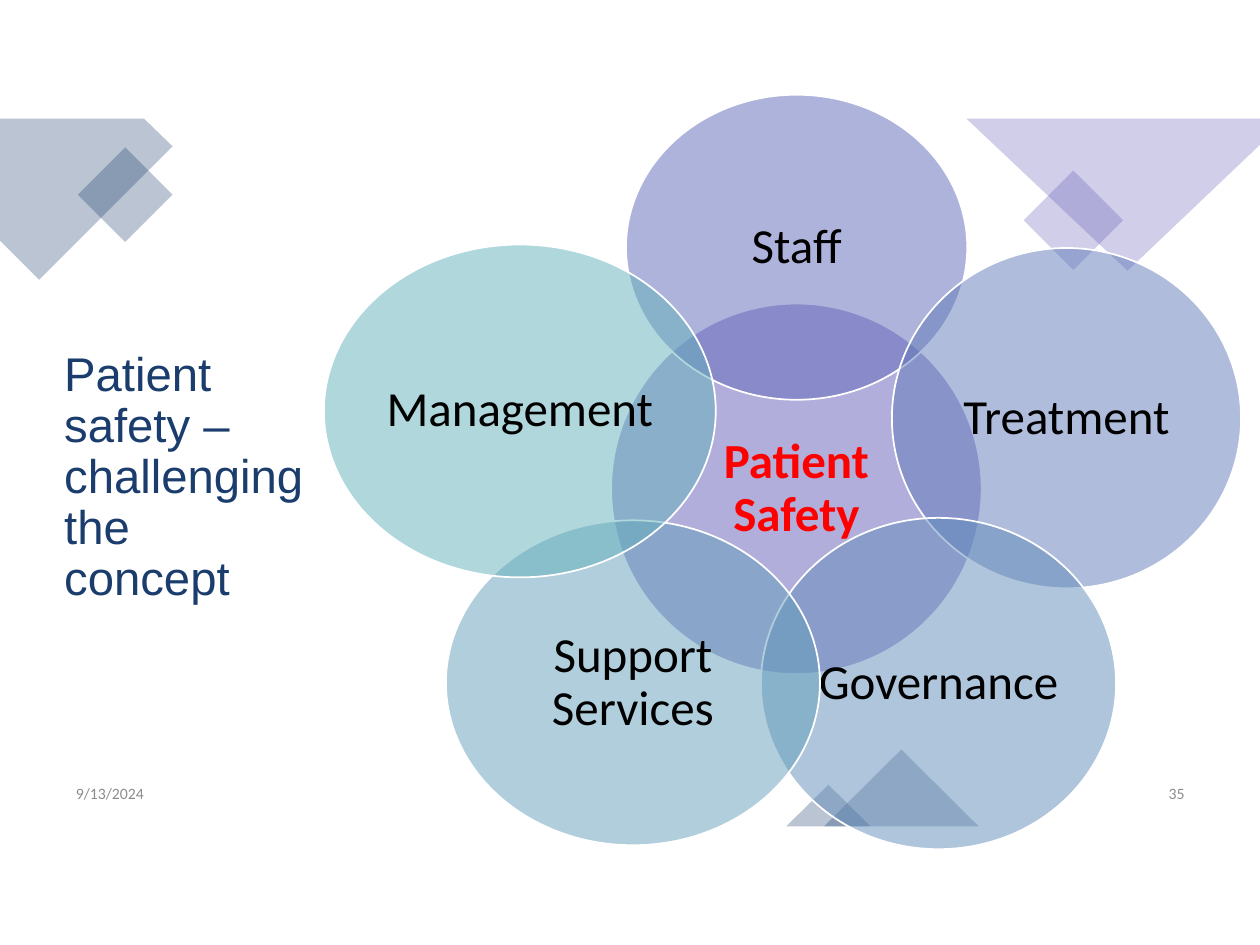
import dataclasses

import pptx
import pptx.dml.color
import pptx.enum.shapes
import pptx.enum.text
import pptx.oxml
import pptx.oxml.ns
import pptx.util

Cm = pptx.util.Cm
Pt = pptx.util.Pt
Shape = pptx.enum.shapes.MSO_SHAPE
Align = pptx.enum.text.PP_ALIGN
Anchor = pptx.enum.text.MSO_ANCHOR


@dataclasses.dataclass(frozen=True)
class Theme:
    navy: str = "1B3D6D"
    purple: str = "665EB8"
    grey: str = "8C8C8C"
    red: str = "FF0000"
    black: str = "000000"
    white: str = "FFFFFF"
    circles: tuple = ("665EB8", "5F68B9", "607AB9", "618CBA", "629EBA", "63B0BB")
    heading_font: str = "Arial"
    body_font: str = "Calibri"
    title_size: float = 27
    circle_size: float = 28
    footer_size: float = 9
    decor_opacity: int = 30
    circle_opacity: int = 50


THEME = Theme()


def rgb(color):
    return pptx.dml.color.RGBColor.from_string(color)


def fill_translucent(shape, color, opacity):
    shape.shadow.inherit = False
    shape.fill.solid()
    shape.fill.fore_color.rgb = rgb(color)
    tint = shape._element.spPr.find(pptx.oxml.ns.qn("a:solidFill"))[0]
    alpha = pptx.oxml.parse_xml(
        f'<a:alpha {pptx.oxml.ns.nsdecls("a")} val="{opacity * 1000}"/>')
    tint.append(alpha)


def write(frame, text, font, size, color, align, bold=False, spacing=None):
    frame.word_wrap = True
    frame.auto_size = pptx.enum.text.MSO_AUTO_SIZE.NONE
    frame.vertical_anchor = Anchor.MIDDLE
    paragraph = frame.paragraphs[0]
    paragraph.alignment = align
    paragraph.line_spacing = spacing
    run = paragraph.add_run()
    run.text = text
    run.font.name = font
    run.font.size = Pt(size)
    run.font.bold = bold
    run.font.color.rgb = rgb(color)


def set_insets(frame, across, down):
    frame.margin_left = frame.margin_right = Cm(across)
    frame.margin_top = frame.margin_bottom = Cm(down)


def add_decor(slide, kind, left, top, width, height, color, rotation=0):
    decor = slide.shapes.add_shape(kind, Cm(left), Cm(top), Cm(width), Cm(height))
    decor.rotation = rotation
    decor.line.fill.background()
    fill_translucent(decor, color, THEME.decor_opacity)


def add_corner(slide, corners, color):
    points = [(Cm(x), Cm(y)) for x, y in corners]
    builder = slide.shapes.build_freeform(*points[0])
    builder.add_line_segments(points[1:], close=True)
    corner = builder.convert_to_shape()
    corner.line.fill.background()
    fill_translucent(corner, color, THEME.decor_opacity)


def add_footer(slide, text, left, align):
    footer = slide.shapes.add_textbox(Cm(left), Cm(15.62), Cm(5.72), Cm(0.76))
    set_insets(footer.text_frame, 0.18, 0.1)
    write(footer.text_frame, text, THEME.body_font, THEME.footer_size,
          THEME.grey, align)


def add_title(slide, text):
    title = slide.shapes.title
    title.left, title.top, title.width, title.height = (
        Cm(1.04), Cm(5.99), Cm(5.38), Cm(7.29))
    write(title.text_frame, text, THEME.heading_font, THEME.title_size,
          THEME.navy, Align.LEFT, spacing=0.9)


def add_circle(slide, text, left, top, width, height, color, central):
    circle = slide.shapes.add_shape(
        Shape.OVAL, Cm(left), Cm(top), Cm(width), Cm(height))
    fill_translucent(circle, color, THEME.circle_opacity)
    circle.line.color.rgb = rgb(THEME.white)
    circle.line.width = Pt(1)
    set_insets(circle.text_frame, 0.1, 0.1)
    write(circle.text_frame, text, THEME.body_font, THEME.circle_size,
          THEME.red if central else THEME.black, Align.CENTER, central, 0.9)


def main():
    deck = pptx.Presentation()
    deck.slide_width, deck.slide_height = Cm(25.4), Cm(19.05)
    slide = deck.slides.add_slide(deck.slide_layouts[5])

    add_corner(slide, [(2.9, 2.39), (0, 2.39), (0, 4.85), (0.79, 5.64),
                       (3.48, 2.95)], THEME.navy)
    add_decor(slide, Shape.RECTANGLE, 1.85, 3.25, 1.35, 1.35, THEME.navy, 315)
    add_decor(slide, Shape.RECTANGLE, 20.93, 3.73, 1.42, 1.42, THEME.purple, 315)
    add_corner(slide, [(25.4, 2.39), (19.48, 2.39), (22.73, 5.46),
                       (25.4, 2.92)], THEME.purple)
    add_footer(slide, "9/13/2024", 1.35, Align.LEFT)
    add_footer(slide, "35", 18.34, Align.RIGHT)
    add_decor(slide, Shape.ISOSCELES_TRIANGLE, 16.61, 15.11, 3.12, 1.55, THEME.navy)
    add_decor(slide, Shape.ISOSCELES_TRIANGLE, 15.85, 15.82, 1.7, 0.84, THEME.navy)
    add_title(slide, "Patient safety – challenging the concept")

    topics = [
        ("Patient Safety", 12.32, 6.12, 7.47, 7.47),
        ("Staff", 12.62, 1.91, 6.88, 6.15),
        ("Treatment", 17.98, 5, 7.04, 6.86),
        ("Governance", 15.34, 10.44, 7.16, 6.68),
        ("Support Services", 8.99, 10.49, 7.54, 6.55),
        ("Management", 6.53, 4.93, 7.9, 6.71),
    ]
    for index, (topic, color) in enumerate(zip(topics, THEME.circles)):
        add_circle(slide, *topic, color, central=index == 0)

    deck.save("out.pptx")


if __name__ == "__main__":
    main()
